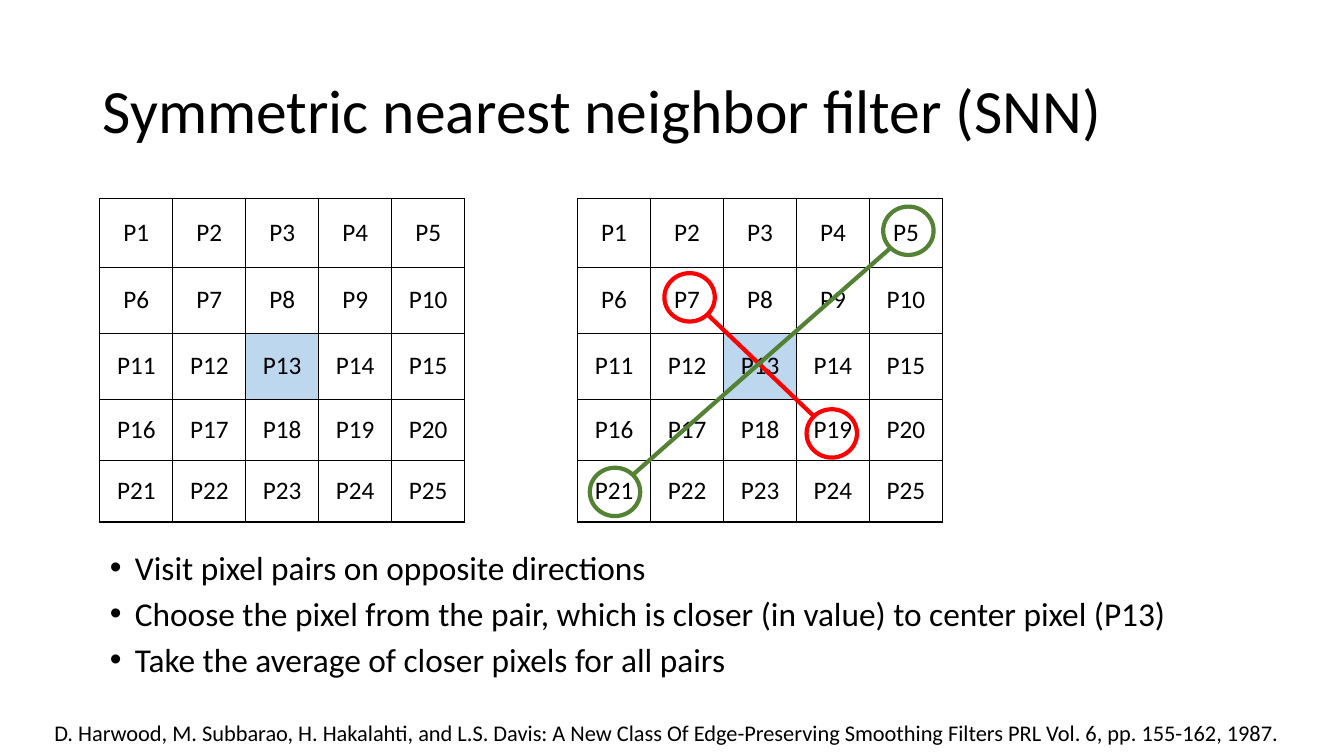
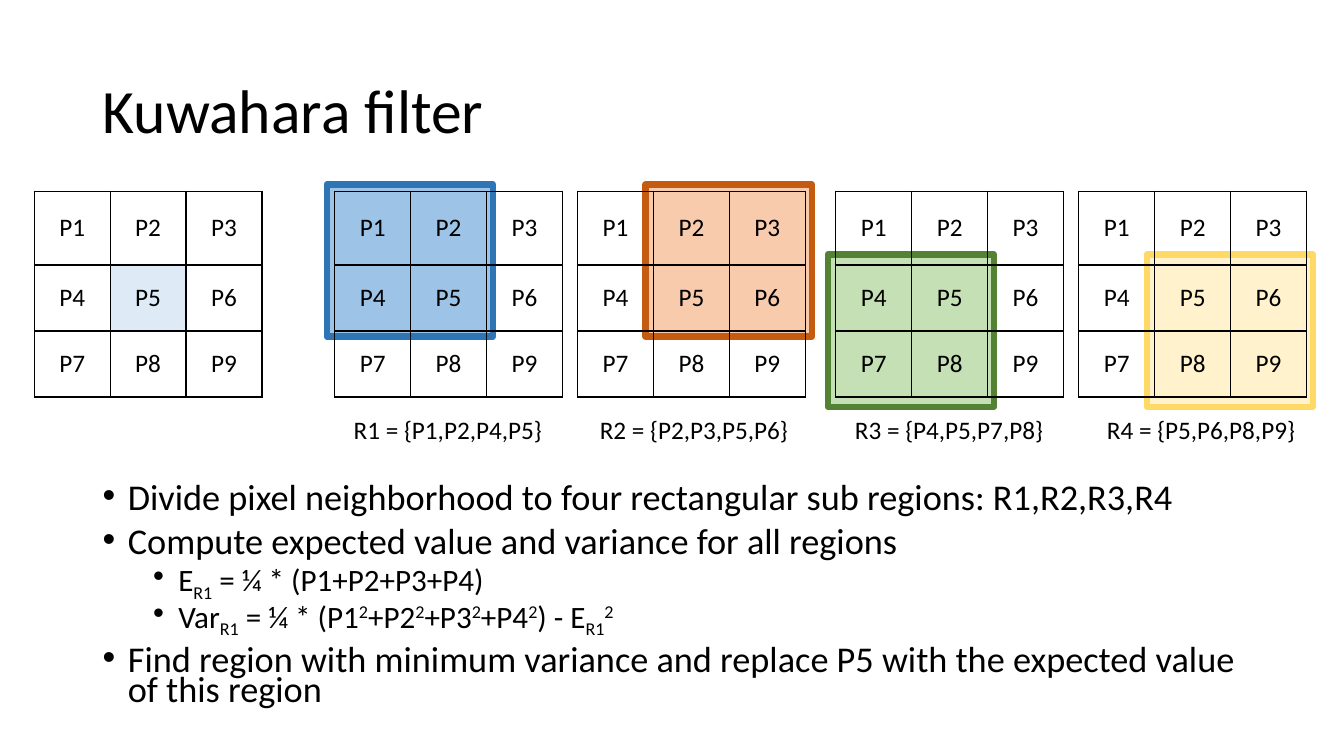
from lxml import etree
from pptx import Presentation
from pptx.dml.color import RGBColor
from pptx.enum.shapes import MSO_CONNECTOR, MSO_SHAPE
from pptx.enum.text import MSO_ANCHOR, PP_ALIGN
from pptx.oxml.ns import qn
from pptx.util import Inches, Pt

# Enum members
OVAL, RECT = MSO_SHAPE.OVAL, MSO_SHAPE.RECTANGLE
LINE = MSO_CONNECTOR.STRAIGHT
MIDDLE, TOP = MSO_ANCHOR.MIDDLE, MSO_ANCHOR.TOP
CENTER = PP_ALIGN.CENTER

# Shared style
WIDE, HIGH = 13.33, 7.5
FONT, BLACK = "Calibri", "000000"
RED, GREEN = "FF0000", "548235"
SUB, SUP = -25000, 30000
TITLE = (6.9, 5.33, 86.25, 19.33)


# Lengths as percent of the slide's width and height
def across(share):
    return Inches(WIDE * share / 100)


def down(share):
    return Inches(HIGH * share / 100)


def place(box):
    left, top, wide, high = box
    return across(left), down(top), across(wide), down(high)


def paint(code):
    return RGBColor.from_string(code)


# Text
def write(para, text, size, base=0):
    run = para.add_run()
    run.text = text
    run.font.size = Pt(size)
    run.font.name = FONT
    run.font.color.rgb = paint(BLACK)
    if base:
        run._r.get_or_add_rPr().set("baseline", str(base))


def frame(slide, box, anchor=TOP, wrap=True):
    body = slide.shapes.add_textbox(*place(box)).text_frame
    body.word_wrap = wrap
    body.vertical_anchor = anchor
    return body


def label(slide, box, text, size, wrap=True):
    write(frame(slide, box, wrap=wrap).paragraphs[0], text, size)


def title(slide, text):
    para = frame(slide, TITLE, MIDDLE).paragraphs[0]
    para.line_spacing = 0.9
    write(para, text, 44)


def bullets(slide, box, items, sizes, pitch):
    """Each item is a level and its runs of (text, baseline)."""
    body = frame(slide, box)
    for order, (level, runs) in enumerate(items):
        para = body.add_paragraph() if order else body.paragraphs[0]
        para.level = level
        para.line_spacing = pitch
        para.space_before = Pt(5 if level else 10)
        props = para._p.get_or_add_pPr()
        props.set("marL", str(Inches(0.25 + level * 0.5)))
        props.set("indent", str(Inches(-0.25)))
        etree.SubElement(props, qn("a:buFont"), typeface="Arial")
        etree.SubElement(props, qn("a:buChar"), char="•")
        for text, base in runs:
            write(para, text, sizes[level], base)


# Pixel tables
def border(cell):
    props = cell._tc.get_or_add_tcPr()
    for side in ("a:lnL", "a:lnR", "a:lnT", "a:lnB"):
        edge = etree.SubElement(props, qn(side), w=str(Pt(1)))
        fill = etree.SubElement(edge, qn("a:solidFill"))
        etree.SubElement(fill, qn("a:srgbClr"), val=BLACK)


def grid(slide, left, top, step, rows, tint=None):
    """A square table of pixels P1, P2, ... with a tinted center."""
    count = len(rows)
    box = (left, top, step * count, sum(rows))
    table = slide.shapes.add_table(count, count, *place(box)).table
    table.first_row = table.horz_banding = False
    for col in table.columns:
        col.width = across(step)
    for row, high in zip(table.rows, rows):
        row.height = down(high)
    for order, cell in enumerate(table.iter_cells()):
        border(cell)
        if tint and order == count * count // 2:
            cell.fill.solid()
            cell.fill.fore_color.rgb = paint(tint)
        else:
            cell.fill.background()
        cell.vertical_anchor = MIDDLE
        para = cell.text_frame.paragraphs[0]
        para.alignment = CENTER
        write(para, f"P{order + 1}", 18)


# Shapes
def shape(slide, kind, box, color, weight, fill=None):
    item = slide.shapes.add_shape(kind, *place(box))
    item.shadow.inherit = False
    item.line.color.rgb = paint(color)
    item.line.width = Pt(weight)
    if fill:
        item.fill.solid()
        item.fill.fore_color.rgb = paint(fill)
    else:
        item.fill.background()


def pair(slide, first, last, color):
    """Two ringed pixels, joined by a line from rim to rim."""
    wide, high = 3.75, 6.4
    for x, y in (first, last):
        box = (x - wide / 2, y - high / 2, wide, high)
        shape(slide, OVAL, box, color, 3)
    # The line meets each ring on its diagonal
    diag = 0.5 ** 0.5 / 2
    dx = wide * diag * (1 if last[0] > first[0] else -1)
    dy = high * diag * (1 if last[1] > first[1] else -1)
    link = slide.shapes.add_connector(
        LINE, across(first[0] + dx), down(first[1] + dy),
        across(last[0] - dx), down(last[1] - dy))
    link.line.color.rgb = paint(color)
    link.line.width = Pt(3)
    etree.SubElement(link._element.spPr, qn("a:effectLst"))


# Slides
def nearest(slide):
    title(slide, "Symmetric nearest neighbor filter (SNN)")
    lines = (
        "Visit pixel pairs on opposite directions",
        "Choose the pixel from the pair, which is closer (in value) "
        "to center pixel (P13)",
        "Take the average of closer pixels for all pairs",
    )
    bullets(slide, (7.43, 72.8, 84.25, 19.2),
            [(0, [(text, 0)]) for text in lines], (23.8,), 0.8)
    rows = (9.07, 8.73, 8.73, 8.13, 8.13)
    for left in (7.43, 42.98):
        grid(slide, left, 26.27, 5.43, rows, "BDD7EE")
    pair(slide, (51.31, 39.33), (61.89, 57.33), RED)
    pair(slide, (67.59, 30.53), (45.76, 65.07), GREEN)
    label(slide, (3.3, 94.53, 96.7, 4.93),
          "D. Harwood, M. Subbarao, H. Hakalahti, and L.S. Davis: A New "
          "Class Of Edge-Preserving Smoothing Filters PRL Vol. 6, "
          "pp. 155-162, 1987.", 16)


def regions(slide):
    step, top, rows = 5.65, 25.33, (9.73, 8.73, 8.73)
    # Table left, region column and row, fill, line, label left and text
    parts = (
        (24.91, 0, 0, "9DC3E6", "2E75B6", 25.58, "R1 = {P1,P2,P4,P5}"),
        (42.98, 1, 0, "F8CBAD", "C55A11", 43.89, "R2 = {P2,P3,P5,P6}"),
        (62.19, 0, 1, "C5E0B4", GREEN, 62.87, "R3 = {P4,P5,P7,P8}"),
        (80.27, 1, 1, "FFF2CC", "FFD966", 81.62, "R4 = {P5,P6,P8,P9}"),
    )
    # Regions lie behind the tables
    for left, col, row, fill, color, _, _ in reversed(parts):
        box = (left + col * step - 0.6, 24.4 + row * 9.27, 12.38, 20.13)
        shape(slide, RECT, box, color, 4.5, fill)
    title(slide, "Kuwahara filter")
    grid(slide, 2.55, top, step, rows, "DEEBF7")
    for left, _, _, _, _, start, text in parts:
        grid(slide, left, top, step, rows)
        label(slide, (start, 54.2, 15.68, 5.33), text, 18, wrap=False)

    mean = [("E", 0), ("R1", SUB), (" = ¼ * (P1+P2+P3+P4)", 0)]
    spread = [("Var", 0), ("R1", SUB)]
    for text in (" = ¼ * (P1", "+P2", "+P3", "+P4"):
        spread += [(text, 0), ("2", SUP)]
    spread += [(") - E", 0), ("R1", SUB), ("2", SUP)]
    items = (
        (0, [("Divide pixel neighborhood to four rectangular sub regions: "
              "R1,R2,R3,R4", 0)]),
        (0, [("Compute expected value and variance for all regions", 0)]),
        (1, mean),
        (1, spread),
        (0, [("Find region with minimum variance and replace P5 with the "
              "expected value of this region", 0)]),
    )
    bullets(slide, (6.9, 63.6, 86.25, 32.53), items, (25.9, 22.2), 0.7)


def main():
    deck = Presentation()
    deck.slide_width, deck.slide_height = Inches(WIDE), Inches(HIGH)
    for build in (nearest, regions):
        build(deck.slides.add_slide(deck.slide_layouts[6]))
    deck.save("out.pptx")


if __name__ == "__main__":
    main()
